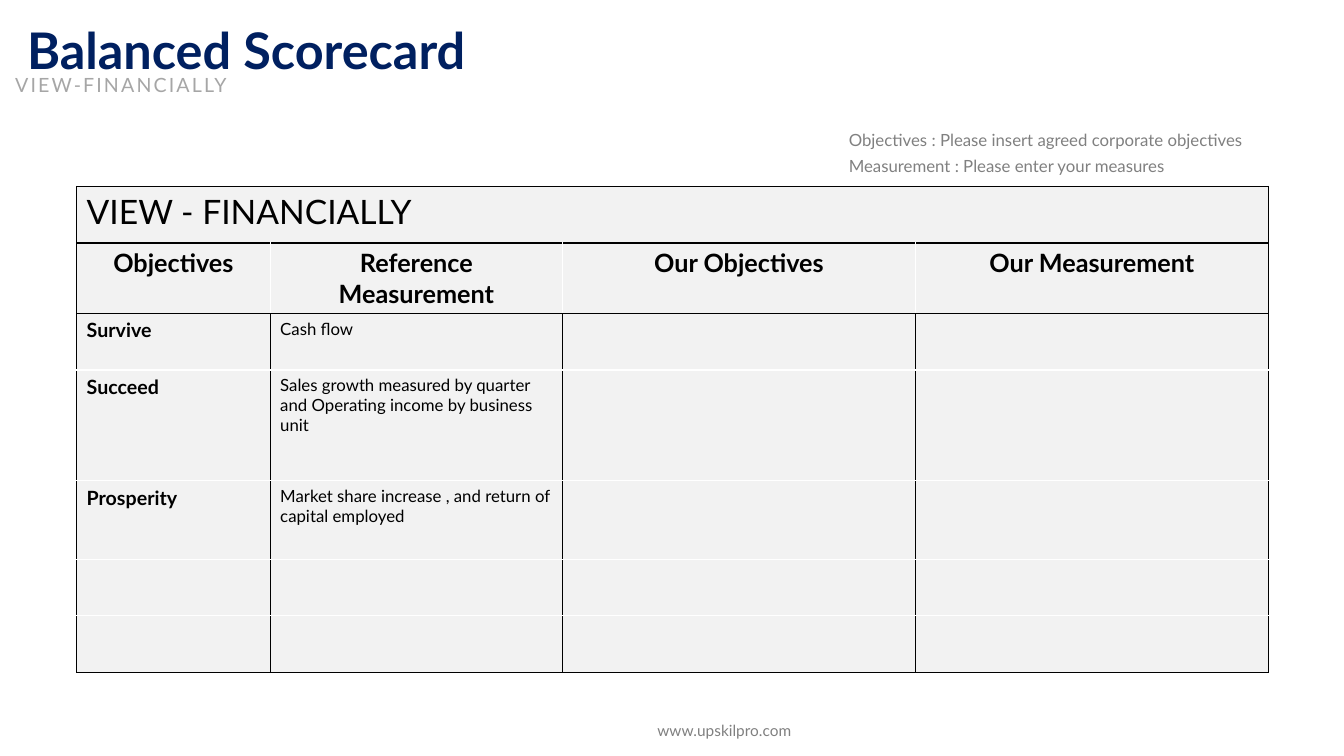
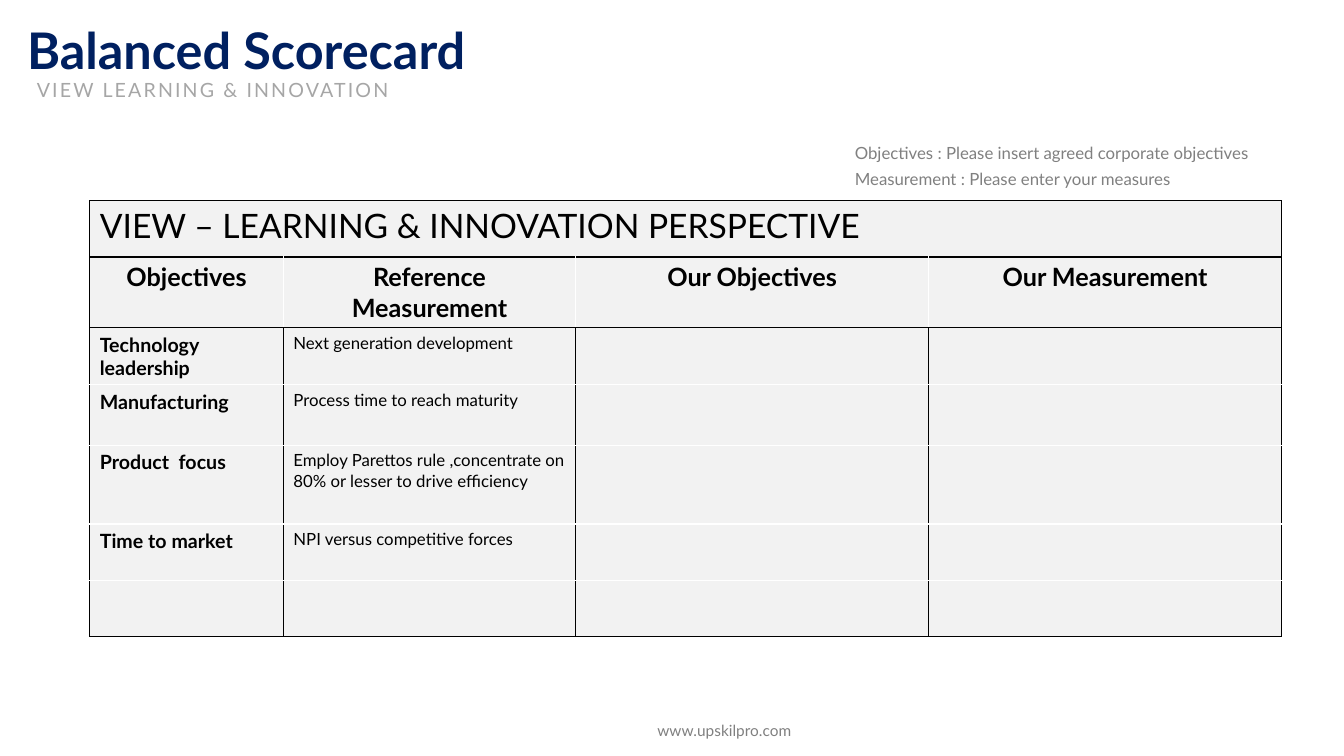
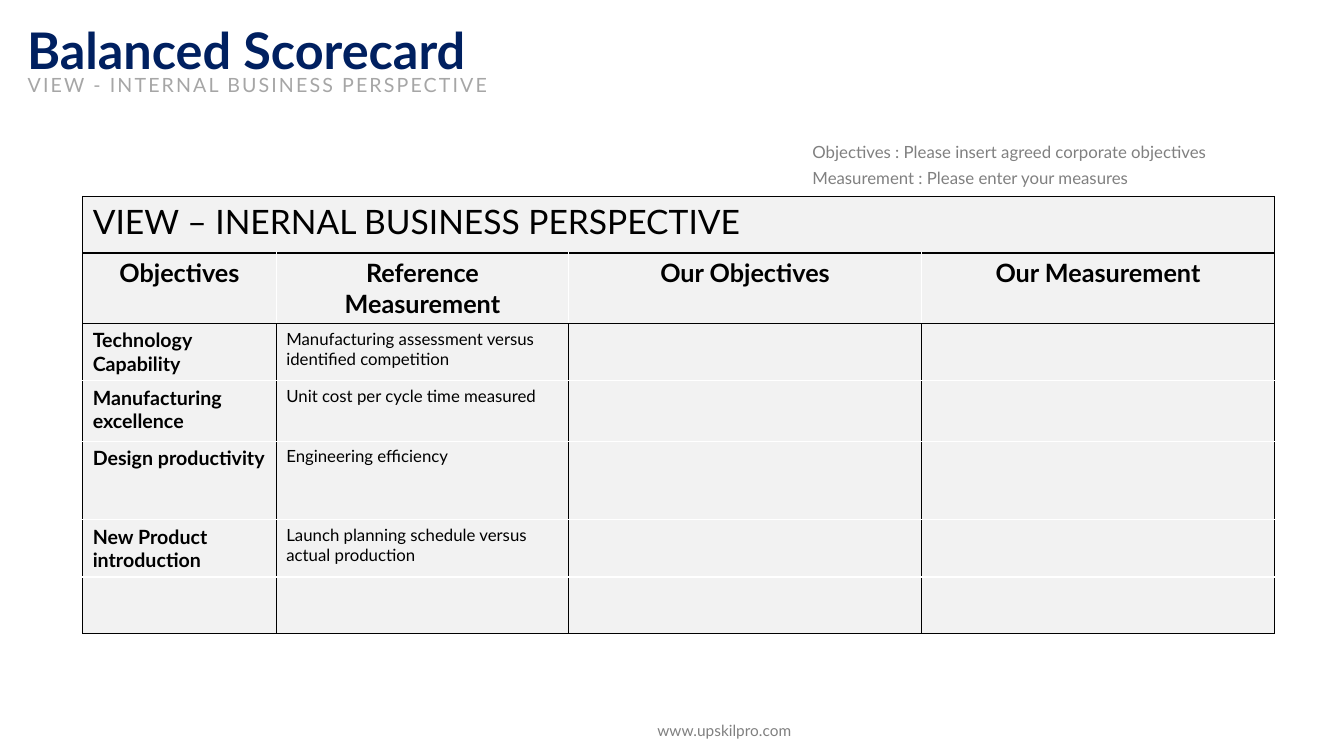
from lxml import etree
from pptx import Presentation
from pptx.dml.color import RGBColor
from pptx.enum import shapes, text
from pptx.oxml.ns import qn
from pptx.util import Inches, Pt

# Shared look
FONT = "Lato"
NAVY = RGBColor(0x00, 0x20, 0x60)
BLACK = RGBColor(0x00, 0x00, 0x00)
WHITE = RGBColor(0xFF, 0xFF, 0xFF)
PALE = RGBColor(0xF2, 0xF2, 0xF2)
GRAY = RGBColor(0x80, 0x80, 0x80)
SILVER = RGBColor(0xA6, 0xA6, 0xA6)
LEFT, CENTER = text.PP_ALIGN.LEFT, text.PP_ALIGN.CENTER

# Shared content
TITLE = "Balanced Scorecard"
SITE = "www.upskilpro.com"
HINTS = ["Objectives : Please insert agreed corporate objectives",
         "Measurement : Please enter your measures"]
HEADS = ["Objectives", "Reference Measurement", "Our Objectives", "Our Measurement"]
COLS = [1.92, 2.9, 3.5, 3.5]

# One entry per slide; goals are (objective, measurement, row height)
VIEWS = [
    dict(sub="VIEW-FINANCIALLY", sub_at=(0.04, 0.67, 2.32, 0.34),
         hint_at=(8.32, 1.24, 4.89, 0.56), grid_at=(0.76, 1.85),
         head="VIEW - FINANCIALLY",
         goals=[("Survive", "Cash flow", 0.56),
                ("Succeed", "Sales growth measured by quarter and Operating "
                 "income by business unit", 1.1),
                ("Prosperity", "Market share increase , and return of capital "
                 "employed", 0.78),
                ("", "", 0.56),
                ("", "", 0.56)]),
    dict(sub="VIEW LEARNING & INNOVATION", sub_at=(0.25, 0.72, 3.72, 0.34),
         hint_at=(8.38, 1.37, 4.51, 0.56), grid_at=(0.89, 1.99),
         head="VIEW – LEARNING & INNOVATION PERSPECTIVE",
         goals=[("Technology leadership", "Next generation development", 0.56),
                ("Manufacturing", "Process time to reach maturity", 0.6),
                ("Product  focus", "Employ Parettos rule ,concentrate on 80% or "
                 "lesser to drive efficiency", 0.78),
                ("Time to market", "NPI versus competitive forces", 0.56),
                ("", "", 0.56)]),
    dict(sub="VIEW - INTERNAL BUSINESS PERSPECTIVE", sub_at=(0.17, 0.67, 4.77, 0.34),
         hint_at=(7.96, 1.36, 4.82, 0.56), grid_at=(0.82, 1.95),
         head="VIEW – INERNAL BUSINESS PERSPECTIVE",
         goals=[("Technology Capability", "Manufacturing assessment versus "
                 "identified competition", 0.56),
                ("Manufacturing excellence", "Unit cost per cycle time measured", 0.6),
                ("Design productivity", "Engineering efficiency", 0.78),
                ("New Product introduction", "Launch planning schedule versus "
                 "actual production", 0.56),
                ("", "", 0.56)]),
]


def write(frame, lines, size, color=BLACK, bold=False, align=LEFT, gap=0, track=0):
    """Fill a text frame with one paragraph per line."""
    for i, line in enumerate(lines):
        para = frame.add_paragraph() if i else frame.paragraphs[0]
        para.alignment = align
        if i:
            para.space_before = Pt(gap)
        run = para.add_run()
        run.text = line
        font = run.font
        font.name, font.size, font.bold = FONT, Pt(size), bold
        font.color.rgb = color
        if track:
            run._r.get_or_add_rPr().set("spc", str(int(track * 100)))


def label(slide, at, line, size, wrap=True, **style):
    box = slide.shapes.add_textbox(*map(Inches, at))
    box.text_frame.word_wrap = wrap
    write(box.text_frame, [line], size, **style)


def hints(slide, at):
    box = slide.shapes.add_shape(shapes.MSO_SHAPE.RECTANGLE, *map(Inches, at))
    box.shadow.inherit = False
    box.fill.solid()
    box.fill.fore_color.rgb = WHITE
    box.line.fill.background()
    box.text_frame.word_wrap = True
    box.text_frame.vertical_anchor = text.MSO_ANCHOR.TOP
    write(box.text_frame, HINTS, 12, color=GRAY, gap=4)


def border(cell, side, color):
    line = etree.SubElement(cell._tc.get_or_add_tcPr(), qn("a:ln" + side), w=str(Pt(1)))
    fill = etree.SubElement(line, qn("a:solidFill"))
    etree.SubElement(fill, qn("a:srgbClr"), val=str(color))


def scorecard(slide, at, head, goals):
    highs = [0.56, 0.56] + [goal[2] for goal in goals]
    rows, cols = len(highs), len(COLS)
    size = (sum(COLS), sum(highs))
    grid = slide.shapes.add_table(rows, cols, *map(Inches, at + size)).table
    grid.first_row = grid.horz_banding = False
    for col, wide in zip(grid.columns, COLS):
        col.width = Inches(wide)
    for row, high in zip(grid.rows, highs):
        row.height = Inches(high)

    # Black frame and columns; white between headings and between goals
    def across(i):
        return BLACK if i <= 2 or i == rows else WHITE

    def down(r, i):
        return WHITE if r == 1 and 0 < i < cols else BLACK

    for r in range(rows):
        for c in range(cols):
            cell = grid.cell(r, c)
            edges = dict(L=down(r, c), R=down(r, c + 1), T=across(r), B=across(r + 1))
            for side, color in edges.items():
                border(cell, side, color)
            cell.fill.solid()
            cell.fill.fore_color.rgb = PALE

    # Words
    grid.cell(0, 0).merge(grid.cell(0, cols - 1))
    write(grid.cell(0, 0).text_frame, [head], 24)
    for c, name in enumerate(HEADS):
        write(grid.cell(1, c).text_frame, [name], 18, bold=True, align=CENTER)
    for r, (goal, gauge, _) in enumerate(goals, 2):
        if goal:
            write(grid.cell(r, 0).text_frame, [goal], 14, bold=True)
            write(grid.cell(r, 1).text_frame, [gauge], 12)


def main():
    deck = Presentation()
    deck.slide_width, deck.slide_height = Inches(13.33), Inches(7.5)
    for view in VIEWS:
        slide = deck.slides.add_slide(deck.slide_layouts[6])
        scorecard(slide, view["grid_at"], view["head"], view["goals"])
        hints(slide, view["hint_at"])
        label(slide, view["sub_at"], view["sub"], 14, wrap=False,
              color=SILVER, align=CENTER, track=1.5)
        label(slide, (0.17, 0.14, 5.2, 0.71), TITLE, 36, color=NAVY, bold=True)
        label(slide, (5.73, 7.1, 2.91, 0.29), SITE, 11, color=GRAY, align=CENTER)
    deck.save("out.pptx")


if __name__ == "__main__":
    main()
